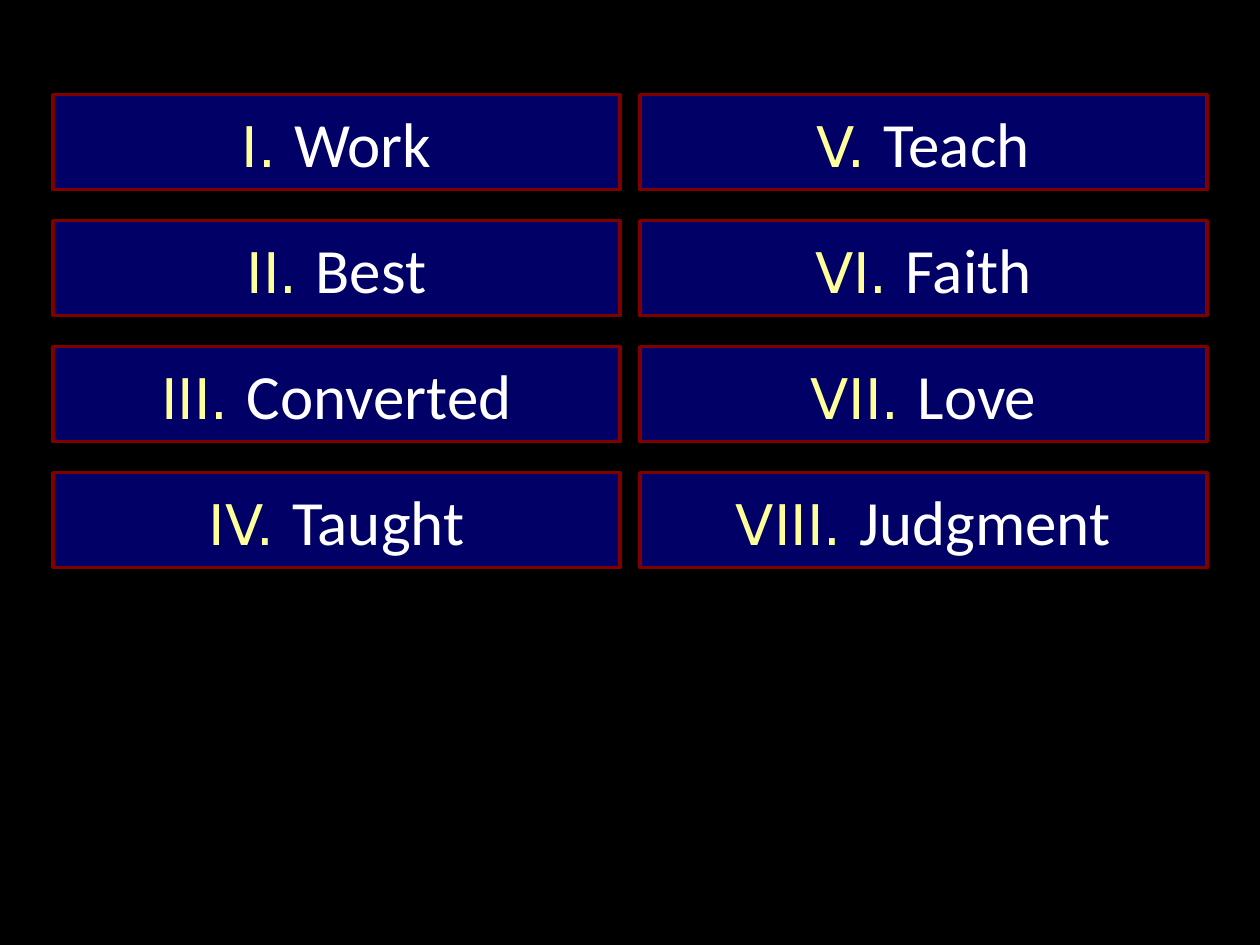
from pptx import Presentation
from pptx.dml.color import RGBColor
from pptx.enum.shapes import MSO_SHAPE
from pptx.enum.text import MSO_ANCHOR, PP_ALIGN
from pptx.util import Cm, Pt

COLUMNS = [
    [("I.", "Work"), ("II.", "Best"), ("III.", "Converted"), ("IV.", "Taught")],
    [("V.", "Teach"), ("VI.", "Faith"), ("VII.", "Love"), ("VIII.", "Judgment")],
]

BLACK = RGBColor(0x00, 0x00, 0x00)
NAVY = RGBColor(0x00, 0x00, 0x66)
MAROON = RGBColor(0x80, 0x00, 0x00)
YELLOW = RGBColor(0xFF, 0xFF, 0x99)
WHITE = RGBColor(0xFF, 0xFF, 0xFF)

SLIDE_W, SLIDE_H = Cm(25.4), Cm(19.05)
MARGIN, TOP = Cm(1.07), Cm(1.91)
BOX_W, BOX_H = Cm(11.43), Cm(1.91)
COLUMN_STEP = SLIDE_W - 2 * MARGIN - BOX_W
ROW_STEP = Cm(2.54)


def add_run(p, text, font, size, color):
    r = p.add_run()
    r.text = text
    r.font.name = font
    r.font.size = Pt(size)
    r.font.color.rgb = color


def add_topic(s, left, top, numeral, topic):
    sp = s.shapes.add_shape(MSO_SHAPE.RECTANGLE, left, top, BOX_W, BOX_H)
    sp.shadow.inherit = False
    sp.fill.solid()
    sp.fill.fore_color.rgb = NAVY
    sp.line.color.rgb = MAROON
    sp.line.width = Pt(2)
    tf = sp.text_frame
    tf.vertical_anchor = MSO_ANCHOR.MIDDLE
    p = tf.paragraphs[0]
    p.alignment = PP_ALIGN.CENTER
    add_run(p, numeral + " ", "DejaVu Sans", 32, YELLOW)
    add_run(p, topic, "Calibri", 36, WHITE)


prs = Presentation()
prs.slide_width, prs.slide_height = SLIDE_W, SLIDE_H
s = prs.slides.add_slide(prs.slide_layouts[6])
s.background.fill.solid()
s.background.fill.fore_color.rgb = BLACK

for col, topics in enumerate(COLUMNS):
    for row, (numeral, topic) in enumerate(topics):
        add_topic(s, MARGIN + col * COLUMN_STEP, TOP + row * ROW_STEP, numeral, topic)

prs.save("out.pptx")
